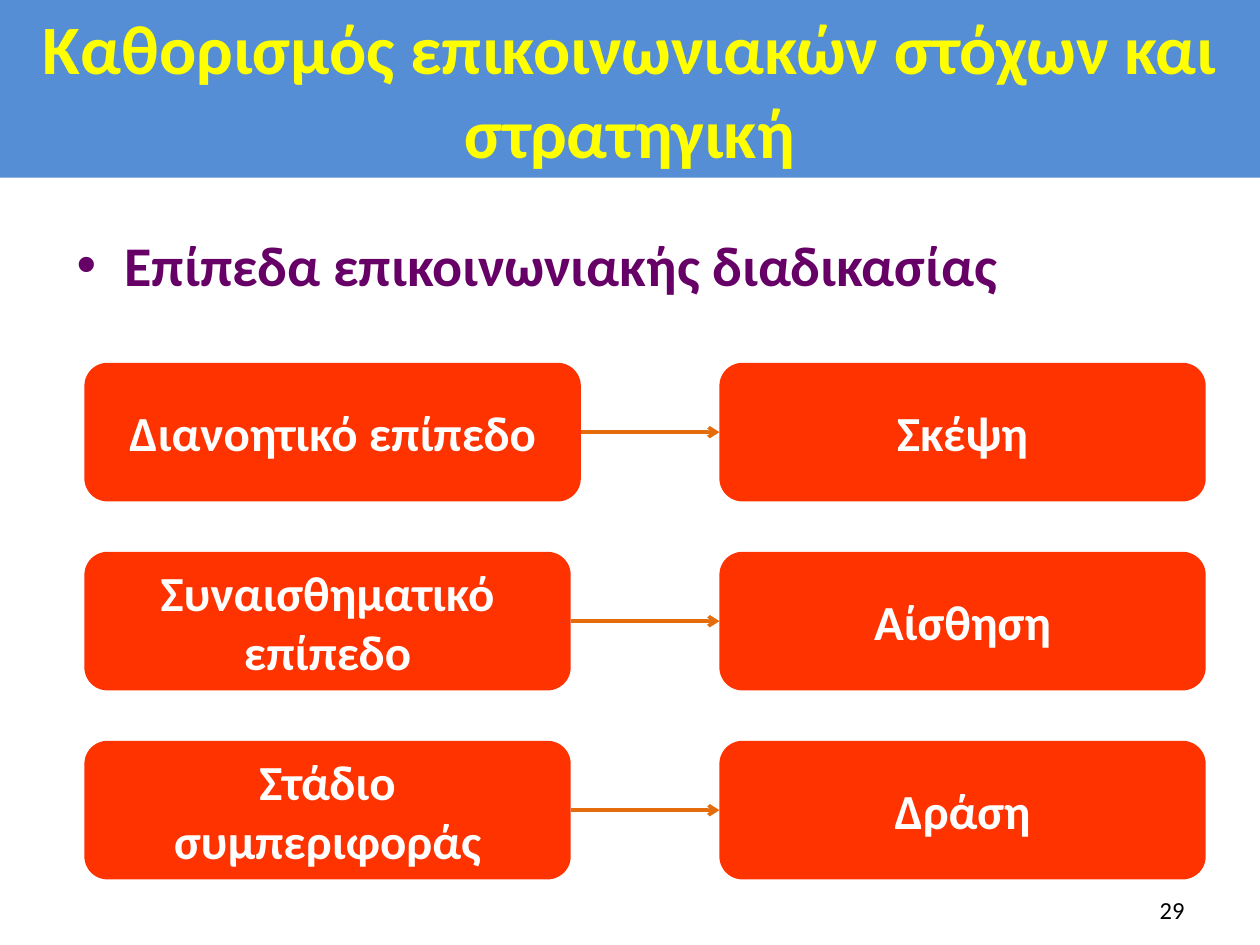
from dataclasses import dataclass

from lxml import etree
from pptx import Presentation, util as u
from pptx.dml.color import RGBColor
from pptx.enum import shapes, text
from pptx.oxml.ns import qn


@dataclass(frozen=True)
class Theme:
    font: str = "Calibri"
    band: str = "558ED5"
    title: str = "FFFF00"
    heading: str = "660066"
    box: str = "FF3300"
    box_text: str = "FFFFFF"
    arrow: str = "E46C0A"
    number: str = "000000"
    title_size: float = 39.6
    heading_size: float = 32
    box_size: float = 28
    number_size: float = 14
    arrow_width: float = 2


T = Theme()
LEVELS = [
    ("Διανοητικό επίπεδο", "Σκέψη", 3.94),
    ("Συναισθηματικό επίπεδο", "Αίσθηση", 3.86),
    ("Στάδιο συμπεριφοράς", "Δράση", 3.86),
]


def inches(box):
    return [u.Inches(v) for v in box]


def fill(sp, color):
    sp.fill.solid()
    sp.fill.fore_color.rgb = RGBColor.from_string(color)


def write(sp, words, size, color, bold=True, align=text.PP_ALIGN.CENTER,
          anchor=text.MSO_ANCHOR.MIDDLE):
    tf = sp.text_frame
    tf.word_wrap = True
    tf.auto_size = text.MSO_AUTO_SIZE.NONE
    tf.vertical_anchor = anchor
    p = tf.paragraphs[0]
    p.text = words
    p.alignment = align
    p.font.name = T.font
    p.font.size = u.Pt(size)
    p.font.bold = bold
    p.font.color.rgb = RGBColor.from_string(color)
    return p


def title_band(s, box, words):
    sp = s.shapes.title
    sp.left, sp.top, sp.width, sp.height = inches(box)
    fill(sp, T.band)
    write(sp, words, T.title_size, T.title)


def heading(s, box, words):
    sp = s.shapes.add_textbox(*inches(box))
    p = write(sp, words, T.heading_size, T.heading,
              align=text.PP_ALIGN.LEFT, anchor=text.MSO_ANCHOR.TOP)
    p.space_before = u.Pt(T.heading_size * 0.2)
    pPr = p._p.get_or_add_pPr()
    pPr.set("marL", str(u.Inches(0.38)))
    pPr.set("indent", str(-u.Inches(0.38)))
    bullet_font = etree.Element(qn("a:buFont"), typeface="Arial")
    bullet = etree.Element(qn("a:buChar"), char="•")
    pPr.find(qn("a:spcBef")).addnext(bullet_font)
    bullet_font.addnext(bullet)


def level_box(s, box, words):
    sp = s.shapes.add_shape(shapes.MSO_SHAPE.ROUNDED_RECTANGLE, *inches(box))
    sp.shadow.inherit = False
    fill(sp, T.box)
    sp.line.fill.background()
    write(sp, words, T.box_size, T.box_text)
    return sp


def arrow(s, start, end):
    c = s.shapes.add_connector(shapes.MSO_CONNECTOR.STRAIGHT, 0, 0, 0, 0)
    c.begin_connect(start, 3)
    c.end_connect(end, 1)
    c.line.width = u.Pt(T.arrow_width)
    c.line.color.rgb = RGBColor.from_string(T.arrow)
    etree.SubElement(c.line._get_or_add_ln(), qn("a:tailEnd"), type="arrow")
    etree.SubElement(c._element.spPr, qn("a:effectLst"))


def level_rows(s, box, levels, row_height=1.1, right_width=3.86):
    left, top, width, height = box
    pitch = (height - row_height) / (len(levels) - 1)
    for i, (level, result, level_width) in enumerate(levels):
        y = top + i * pitch
        a = level_box(s, (left, y, level_width, row_height), level)
        b = level_box(s, (left + width - right_width, y, right_width, row_height), result)
        arrow(s, a, b)


def page_number(s, box, words):
    sp = s.shapes.add_textbox(*inches(box))
    write(sp, words, T.number_size, T.number, bold=False, align=text.PP_ALIGN.RIGHT)


def main():
    prs = Presentation()
    prs.slide_width, prs.slide_height = inches((10, 7.5))
    s = prs.slides.add_slide(prs.slide_layouts[5])
    title_band(s, (0, 0, 10, 1.41), "Καθορισμός επικοινωνιακών στόχων και στρατηγική")
    heading(s, (0.51, 1.78, 9.15, 5.54), "Επίπεδα επικοινωνιακής διαδικασίας")
    page_number(s, (7.17, 7.02, 2.33, 0.4), "29")
    level_rows(s, (0.67, 2.88, 8.9, 4.1), LEVELS)
    prs.save("out.pptx")


if __name__ == "__main__":
    main()
